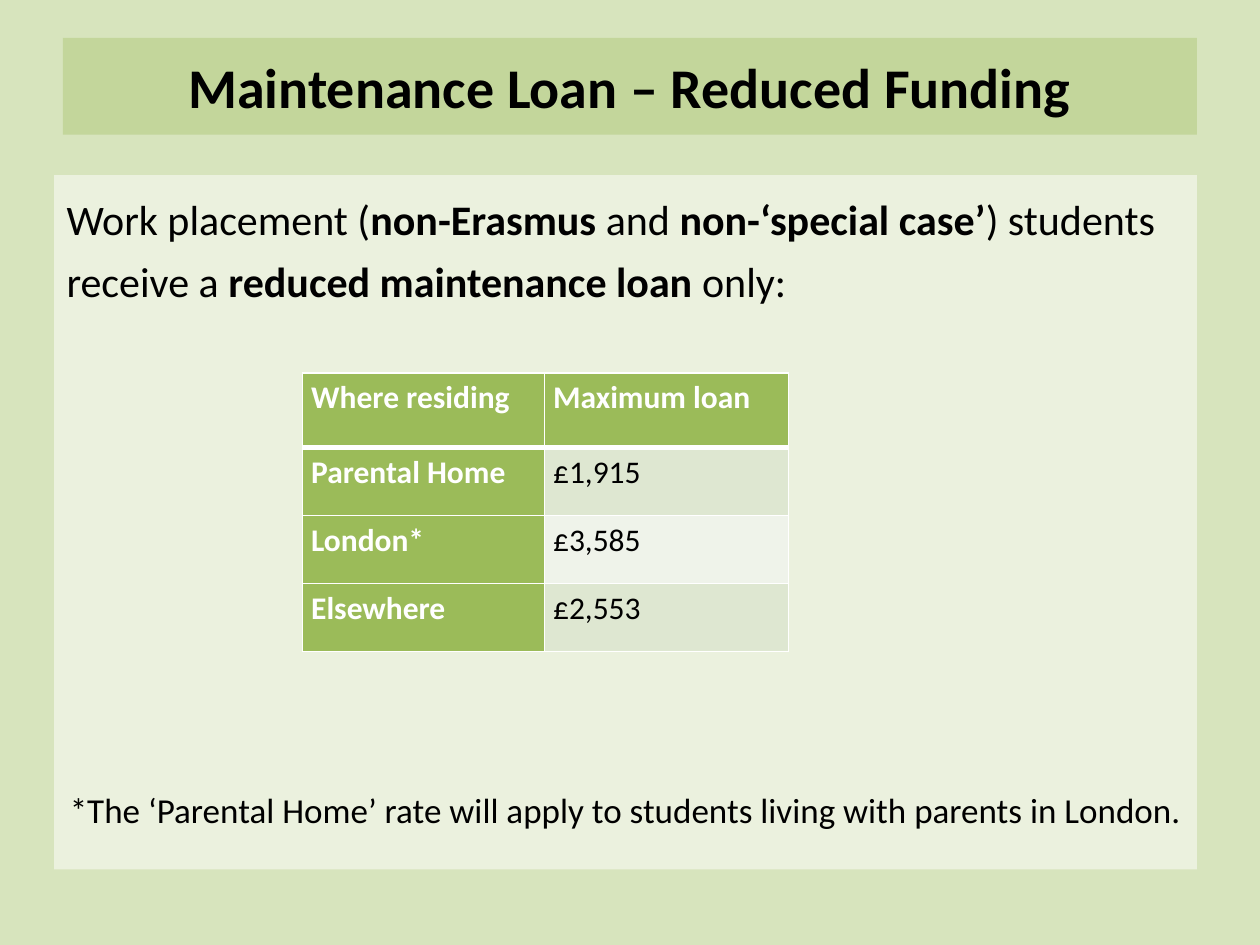
from dataclasses import dataclass

from lxml import etree
from pptx import Presentation
from pptx.dml.color import RGBColor
from pptx.enum.shapes import MSO_SHAPE
from pptx.enum.text import MSO_ANCHOR, PP_ALIGN
from pptx.oxml.ns import qn
from pptx.util import Inches, Pt

RECT = MSO_SHAPE.RECTANGLE
TOP, MIDDLE = MSO_ANCHOR.TOP, MSO_ANCHOR.MIDDLE
LEFT, CENTER = PP_ALIGN.LEFT, PP_ALIGN.CENTER


@dataclass(frozen=True)
class Theme:
    font: str = "Calibri"
    background: str = "D7E4BD"
    banner: str = "C3D69B"
    panel: str = "EBF1DE"
    accent: str = "9BBB59"
    bands: tuple = ("DEE7D1", "EFF3EA")
    text: str = "000000"
    white: str = "FFFFFF"
    title_size: int = 32
    body_size: int = 24
    note_size: int = 20
    table_size: int = 18


THEME = Theme()


def style(p, size, color=THEME.text, bold=False, align=LEFT, spacing=1.0):
    p.font.name, p.font.size, p.font.bold = THEME.font, Pt(size), bold
    p.font.color.rgb = RGBColor.from_string(color)
    p.alignment, p.line_spacing = align, spacing


def add_panel(s, x, y, w, h, color, anchor):
    sp = s.shapes.add_shape(RECT, Inches(x), Inches(y), Inches(w), Inches(h))
    sp.shadow.inherit = False
    sp.fill.solid()
    sp.fill.fore_color.rgb = RGBColor.from_string(color)
    sp.line.fill.background()
    sp.text_frame.word_wrap = True
    sp.text_frame.vertical_anchor = anchor
    return sp.text_frame


prs = Presentation()
prs.slide_width, prs.slide_height = Inches(10), Inches(7.5)
s = prs.slides.add_slide(prs.slide_layouts[6])
s.background.fill.solid()
s.background.fill.fore_color.rgb = RGBColor.from_string(THEME.background)

# Title banner
tf = add_panel(s, 0.5, 0.3, 9, 0.77, THEME.banner, MIDDLE)
p = tf.paragraphs[0]
p.text = "Maintenance Loan – Reduced Funding"
style(p, THEME.title_size, bold=True, align=CENTER)

# Body panel: introduction, with bold key terms
tf = add_panel(s, 0.43, 1.39, 9.07, 5.51, THEME.panel, TOP)
p = tf.paragraphs[0]
style(p, THEME.body_size, spacing=1.24)
p.space_before = p.space_after = Pt(6)
for text, bold in [
    ("Work placement (", False),
    ("non-Erasmus ", True),
    ("and ", False),
    ("non-‘special case’", True),
    (") students receive a ", False),
    ("reduced maintenance loan ", True),
    ("only:", False),
]:
    r = p.add_run()
    r.text, r.font.bold = text, bold

# Footnote, spaced to sit below the table
p = tf.add_paragraph()
p.text = "*The ‘Parental Home’ rate will apply to students living with parents in London."
style(p, THEME.note_size, align=CENTER, spacing=1.24)
p.space_before = Pt(264)

# Loan table
rows = [
    ("Where residing", "Maximum loan"),
    ("Parental Home", "£1,915"),
    ("London*", "£3,585"),
    ("Elsewhere", "£2,553"),
]
table = s.shapes.add_table(
    len(rows), 2, Inches(2.4), Inches(2.96), Inches(3.86), Inches(2.21)
).table
for column, width in zip(table.columns, (1.92, 1.94)):
    column.width = Inches(width)

for i, row in enumerate(rows):
    table.rows[i].height = Inches(0.59 if i == 0 else 0.54)
    for j, text in enumerate(row):
        cell = table.cell(i, j)
        heading = i == 0 or j == 0
        cell.margin_left = cell.margin_right = Inches(0.07)
        cell.margin_top = cell.margin_bottom = 0
        p = cell.text_frame.paragraphs[0]
        p.text = text
        style(p, THEME.table_size, THEME.white if heading else THEME.text,
              bold=heading, spacing=1.15)

        # White borders, heavier under the header row
        tc_pr = cell._tc.get_or_add_tcPr()
        for side in "LRTB":
            heavy = (i, side) in ((0, "B"), (1, "T"))
            ln = etree.SubElement(tc_pr, qn(f"a:ln{side}"), w=str(Pt(3 if heavy else 1)))
            fill = etree.SubElement(ln, qn("a:solidFill"))
            etree.SubElement(fill, qn("a:srgbClr"), val=THEME.white)

        color = THEME.accent if heading else THEME.bands[(i - 1) % 2]
        cell.fill.solid()
        cell.fill.fore_color.rgb = RGBColor.from_string(color)

prs.save("out.pptx")
